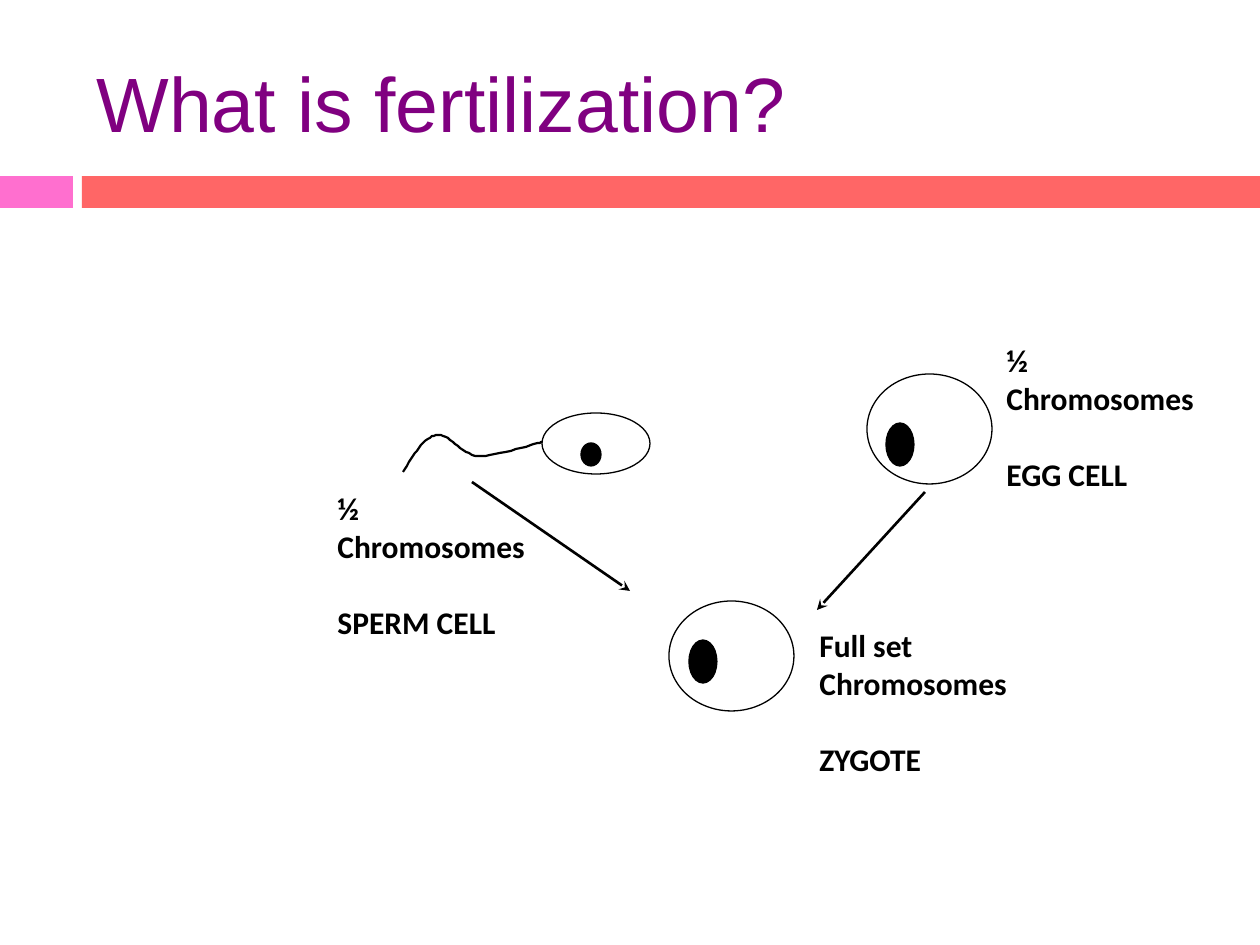
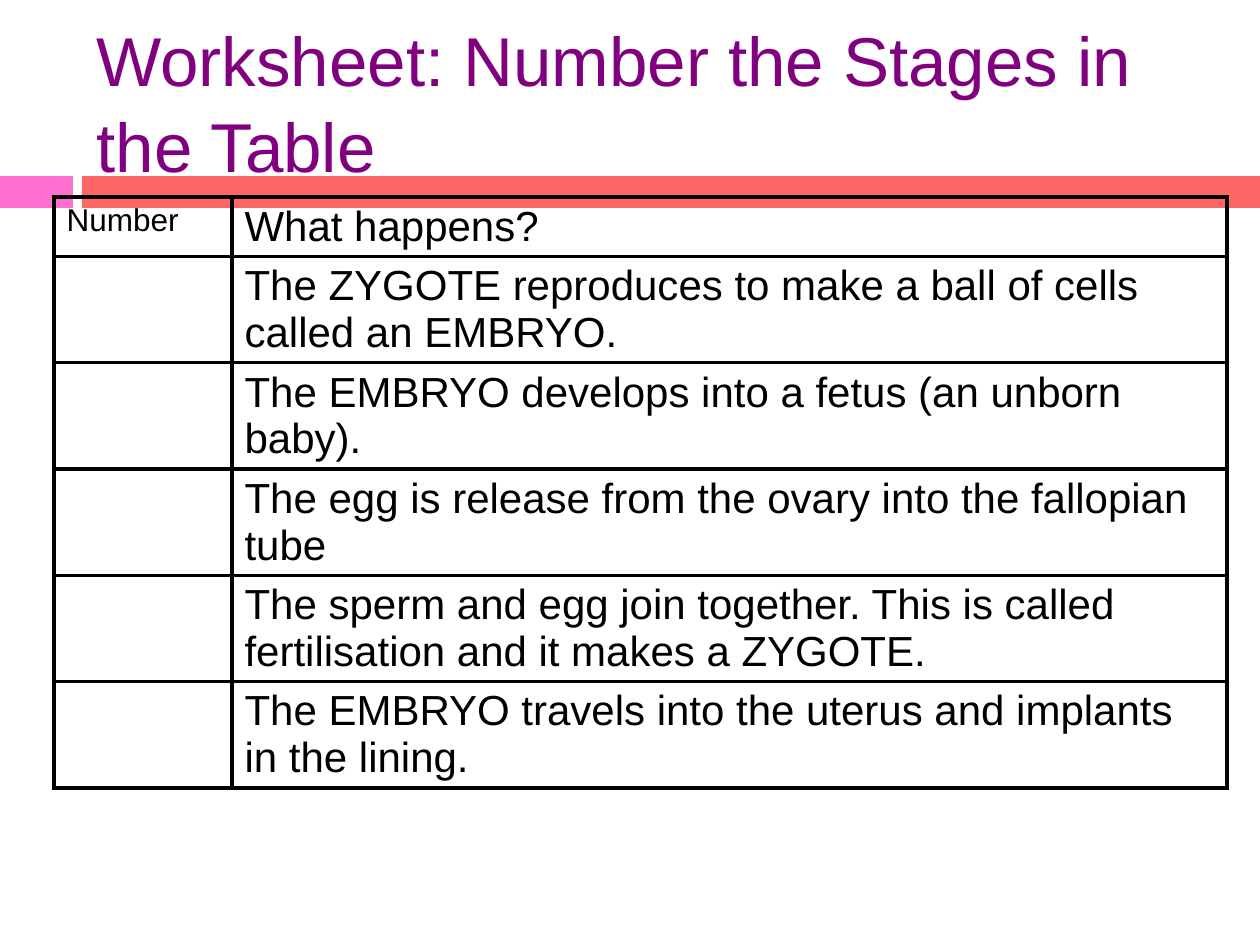
import pptx
import pptx.dml.color
import pptx.enum.shapes
import pptx.enum.text
import pptx.oxml
import pptx.oxml.ns
import pptx.util
from lxml import etree

PX_PER_INCH = 126
COLORS = {"title": "800080", "pink": "FF6FCF", "coral": "FF6666",
          "ink": "000000", "paper": "FFFFFF"}
TITLE_ONLY_LAYOUT = 5


def px(length):
    return pptx.util.Emu(round(length * pptx.util.Inches(1) / PX_PER_INCH))


def box(*lengths):
    return [px(length) for length in lengths]


def color(name):
    return pptx.dml.color.RGBColor.from_string(COLORS[name])


def bezier(start, control_1, control_2, end, steps=16):
    """Points along a cubic curve, without its start."""
    points = []
    for step in range(1, steps + 1):
        t = step / steps
        weights = ((1 - t) ** 3, 3 * t * (1 - t) ** 2, 3 * t * t * (1 - t), t ** 3)
        corners = (start, control_1, control_2, end)
        points.append(tuple(sum(w * corner[axis] for w, corner in zip(weights, corners))
                            for axis in (0, 1)))
    return points


class Deck:
    def __init__(self):
        self.presentation = pptx.Presentation()
        self.presentation.slide_width = px(1260)
        self.presentation.slide_height = px(945)
        self.slide = None

    def add_slide(self, title, size):
        layout = self.presentation.slide_layouts[TITLE_ONLY_LAYOUT]
        self.slide = self.presentation.slides.add_slide(layout)
        self.shape("RECTANGLE", (0, 176, 73, 32), "pink")
        self.shape("RECTANGLE", (82, 176, 1178, 32), "coral")
        shape = self.slide.shapes.title
        shape.left, shape.top, shape.width, shape.height = box(84, 32, 1124, 136)
        frame = shape.text_frame
        frame.text = title
        frame.auto_size = pptx.enum.text.MSO_AUTO_SIZE.NONE
        frame.vertical_anchor = pptx.enum.text.MSO_ANCHOR.MIDDLE
        paragraph = frame.paragraphs[0]
        paragraph.alignment = pptx.enum.text.PP_ALIGN.LEFT
        paragraph.line_spacing = 1.04
        self.style_font(paragraph, "Arial", size, "title")

    def style_font(self, paragraph, name, size, color_name="ink", bold=False):
        font = paragraph.font
        font.name, font.size, font.bold = name, pptx.util.Pt(size), bold
        font.color.rgb = color(color_name)

    def style_line(self, shape, width):
        shape.line.color.rgb = color("ink")
        shape.line.width = pptx.util.Pt(width)

    def shape(self, kind, area, fill, line_width=None):
        preset = getattr(pptx.enum.shapes.MSO_SHAPE, kind)
        shape = self.slide.shapes.add_shape(preset, *box(*area))
        shape.shadow.inherit = False
        shape.fill.solid()
        shape.fill.fore_color.rgb = color(fill)
        if line_width:
            self.style_line(shape, line_width)
        else:
            shape.line.fill.background()

    def cell(self, outline, nucleus):
        self.shape("OVAL", outline, "paper", 0.75)
        self.shape("OVAL", nucleus, "ink", 0.75)

    def curve(self, start, *segments):
        points, last = [], start
        for segment in segments:
            points += bezier(last, *segment)
            last = segment[-1]
        builder = self.slide.shapes.build_freeform(*start, scale=px(1))
        builder.add_line_segments(points, close=False)
        shape = builder.convert_to_shape()
        shape.shadow.inherit = False
        shape.fill.background()
        self.style_line(shape, 1.25)

    def arrow(self, start, end):
        connector = self.slide.shapes.add_connector(
            pptx.enum.shapes.MSO_CONNECTOR.STRAIGHT, *box(*start, *end))
        self.style_line(connector, 1.5)
        tail = etree.SubElement(connector.line._get_or_add_ln(), pptx.oxml.ns.qn("a:tailEnd"))
        tail.set("type", "stealth")
        etree.SubElement(connector._element.spPr, pptx.oxml.ns.qn("a:effectLst"))

    def label(self, left, top, chromosomes, name):
        frame = self.slide.shapes.add_textbox(*box(left, top, 236, 165)).text_frame
        frame.word_wrap = True
        frame.text = f"{chromosomes}\n{name}"
        for paragraph in frame.paragraphs:
            self.style_font(paragraph, "Calibri", 18, bold=True)
        frame.paragraphs[1].space_before = pptx.util.Pt(22)

    def border(self, cell):
        namespace = pptx.oxml.ns.nsdecls("a")
        for side in "LRTB":
            cell._tc.get_or_add_tcPr().append(pptx.oxml.parse_xml(
                f'<a:ln{side} {namespace} w="{pptx.util.Pt(2.25)}"><a:solidFill>'
                f'<a:srgbClr val="{COLORS["ink"]}"/></a:solidFill></a:ln{side}>'))

    def table(self, left, top, widths, heights, rows, size_of):
        frame = self.slide.shapes.add_table(
            len(rows), len(widths), *box(left, top, sum(widths), sum(heights)))
        table = frame.table
        table.first_row = table.horz_banding = False
        for column, width in zip(table.columns, widths):
            column.width = px(width)
        for row, height, texts in zip(table.rows, heights, rows):
            row.height = px(height)
            for cell, text, size in zip(row.cells, texts, size_of):
                self.border(cell)
                cell.fill.background()
                cell.text = text
                self.style_font(cell.text_frame.paragraphs[0], "Arial", size)


def build_fertilization(deck):
    deck.add_slide("What is fertilization?", 44)
    deck.cell((867, 374, 125, 110), (886, 423, 28, 43))
    deck.cell((542, 413, 108, 61), (581, 443, 20, 23))
    deck.curve((403, 472),
               ((413, 455), (425, 437), (436, 435)),
               ((449, 432), (460, 455), (478, 456)),
               ((495, 457), (542, 442), (542, 442)))
    deck.arrow((472, 482), (630, 591))
    deck.arrow((925, 492), (817, 610))
    deck.cell((669, 601, 125, 110), (689, 640, 28, 43))
    deck.label(994, 335, "½ Chromosomes", "EGG CELL")
    deck.label(325, 483, "½ Chromosomes", "SPERM CELL")
    deck.label(807, 620, "Full set Chromosomes", "ZYGOTE")


def build_worksheet(deck):
    stages = [
        "The ZYGOTE reproduces to make a ball of cells called an EMBRYO.",
        "The EMBRYO develops into a fetus (an unborn baby).",
        "The egg is release from the ovary into the fallopian tube",
        "The sperm and egg join together. This is called fertilisation and it makes a ZYGOTE.",
        "The EMBRYO travels into the uterus and implants in the lining.",
    ]
    deck.add_slide("Worksheet: Number the Stages in the Table", 39.5)
    rows = [("Number", "What happens?")] + [("", stage) for stage in stages]
    deck.table(54, 197, (178, 995), [59] + [106] * len(stages), rows, size_of=(18, 24))


def main():
    deck = Deck()
    build_fertilization(deck)
    build_worksheet(deck)
    deck.presentation.save("out.pptx")


if __name__ == "__main__":
    main()
